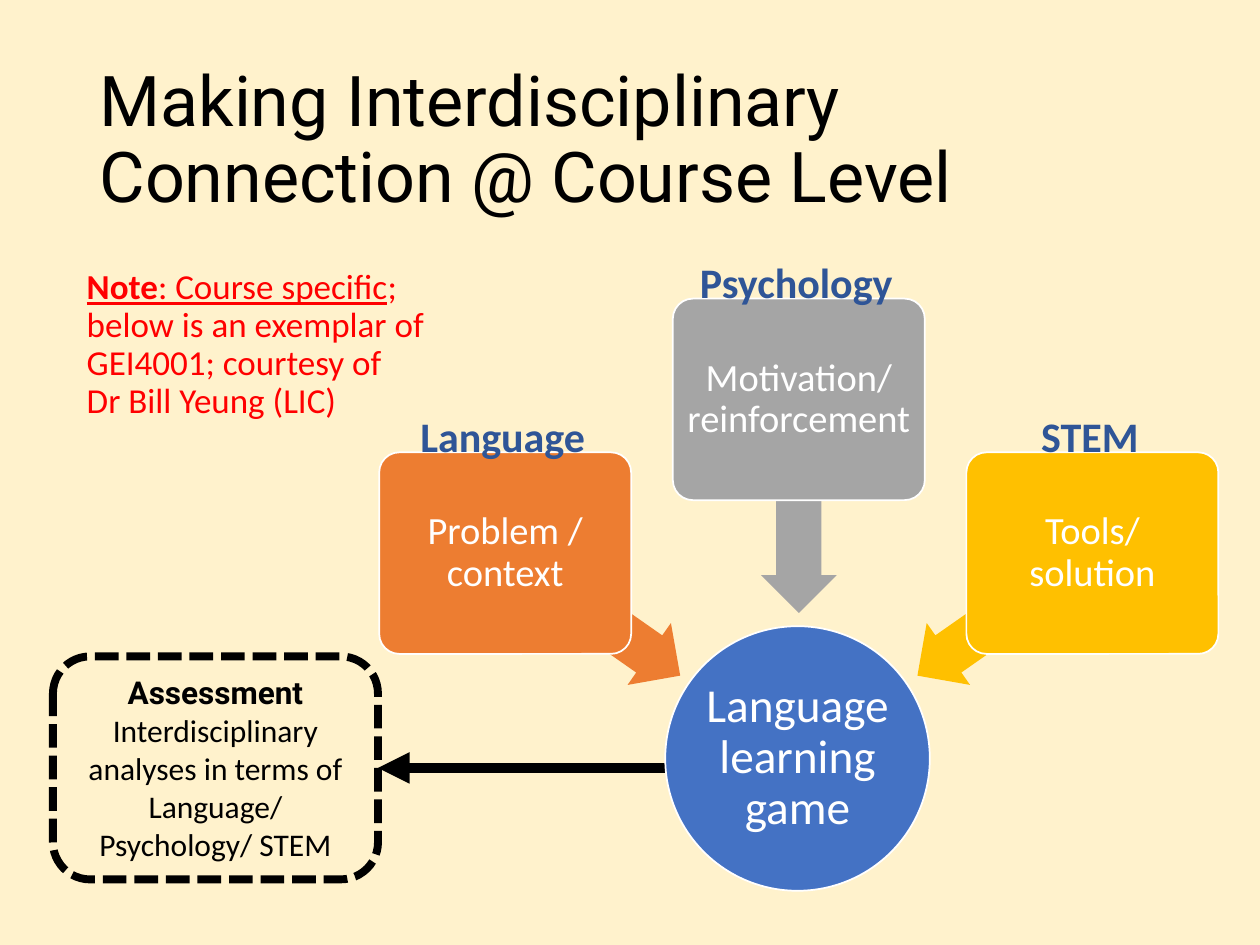
"""Build the slide on interdisciplinary connection at course level."""
import math

from lxml import etree
from pptx import Presentation
from pptx import util as u
from pptx.dml.color import RGBColor
from pptx.enum import dml, shapes, text
from pptx.oxml import ns

COLOURS = {
    "background": "FFF2CC", "ink": "000000", "paper": "FFFFFF", "note": "FF0000",
    "label": "2F5597", "hub": "4472C4", "language": "ED7D31",
    "psychology": "A5A5A5", "stem": "FFC000",
}
FRAME = {"word_wrap": True, "auto_size": text.MSO_AUTO_SIZE.NONE}
MIDDLE = {**FRAME, "vertical_anchor": text.MSO_ANCHOR.MIDDLE}
MARGINS = ("margin_left", "margin_top", "margin_right", "margin_bottom")
CENTRED = {"alignment": text.PP_ALIGN.CENTER}
TIGHT = {"line_spacing": 0.9}


def rgb(name):
    """Return the named colour."""
    return RGBColor.from_string(COLOURS[name])


def apply(target, values):
    """Set each attribute of the target from a dict."""
    for name, value in values.items():
        setattr(target, name, value)


def inches(box):
    """Turn a box of numbers into lengths."""
    return [u.Inches(length) for length in box]


def write(paragraph, wording, size, colour, face="Calibri", **style):
    """Add one formatted run to a paragraph."""
    run = paragraph.add_run()
    run.text = wording
    apply(run.font, {"size": u.Pt(size), "name": face, **style})
    run.font.color.rgb = rgb(colour)


def add_outline(slide, preset, box, fill=None, line=None, weight=1):
    """Add a preset shape with a plain fill and line."""
    outline = slide.shapes.add_shape(preset, *inches(box))
    outline.shadow.inherit = False
    if fill:
        outline.fill.solid()
        outline.fill.fore_color.rgb = rgb(fill)
    else:
        outline.fill.background()
    if line:
        outline.line.color.rgb = rgb(line)
        outline.line.width = u.Pt(weight)
    else:
        outline.line.fill.background()
    return outline


def add_title(slide, box):
    """Place and format the title."""
    title = slide.shapes.title
    apply(title, dict(zip(("left", "top", "width", "height"), inches(box))))
    apply(title.text_frame, MIDDLE)
    heading = title.text_frame.paragraphs[0]
    apply(heading, {**TIGHT, "alignment": text.PP_ALIGN.LEFT})
    write(heading, "Making Interdisciplinary Connection @ Course Level", 40, "ink", "Roboto")


def add_note(slide, box):
    """Add the red note about the course."""
    frame = slide.shapes.add_textbox(*inches(box)).text_frame
    apply(frame, FRAME)
    note = frame.paragraphs[0]
    apply(note, {**TIGHT, "space_before": u.Pt(10)})
    write(note, "Note", 20, "note", bold=True, underline=True)
    write(note, ": Course specific", 20, "note", underline=True)
    write(note, "; below is an exemplar of GEI4001; courtesy of ", 20, "note")
    note.add_line_break()
    write(note, "Dr Bill Yeung (LIC)", 20, "note")


def add_assessment(slide, box, start_x):
    """Add the dashed assessment box and the arrow that leads to it."""
    left, top, width, height = box
    assessment = add_outline(slide, shapes.MSO_SHAPE.ROUNDED_RECTANGLE, box, line="ink", weight=4.5)
    assessment.line.dash_style = dml.MSO_LINE.SQUARE_DOT
    frame = assessment.text_frame
    apply(frame, MIDDLE)
    heading, body = frame.paragraphs[0], frame.add_paragraph()
    for paragraph in (heading, body):
        apply(paragraph, CENTRED)
    write(heading, "Assessment", 18, "ink", "Roboto", bold=True)
    write(body, "Interdisciplinary analyses in terms of Language/ Psychology/ STEM", 18, "ink")

    middle = top + height / 2
    arrow = slide.shapes.add_connector(
        shapes.MSO_CONNECTOR.STRAIGHT, *inches((start_x, middle, left + width, middle)))
    arrow.end_connect(assessment, 3)
    arrow.line.color.rgb = rgb("ink")
    arrow.line.width = u.Pt(6)
    etree.SubElement(arrow.line._get_or_add_ln(), ns.qn("a:tailEnd"), type="triangle")
    etree.SubElement(arrow._element.spPr, ns.qn("a:effectLst"))


def add_node(slide, preset, box, fill, wording, size, margin, corner=None):
    """Add a filled shape with centred white wording."""
    node = add_outline(slide, preset, box, fill, "paper")
    if corner:
        node.adjustments[0] = corner
    apply(node.text_frame, {**MIDDLE, **dict.fromkeys(MARGINS, u.Inches(margin))})
    paragraph = node.text_frame.paragraphs[0]
    apply(paragraph, {**CENTRED, **TIGHT})
    write(paragraph, wording, size, "paper")


def add_discipline(slide, box, label, wording, fill, heading):
    """Add a discipline card with its label and its arrow to the hub."""
    left, top, width, height = box
    centre_x, centre_y = left + width / 2, top + height / 2
    length, breadth, reach = 1.69, 0.6, 0.85
    angle = math.radians(heading)
    arrow = add_outline(slide, shapes.MSO_SHAPE.LEFT_ARROW, (
        centre_x + reach * math.cos(angle) - length / 2,
        centre_y + reach * math.sin(angle) - breadth / 2, length, breadth), fill)
    arrow.rotation = heading + 180
    arrow.adjustments[0], arrow.adjustments[1] = 0.6, 0.5

    add_node(slide, shapes.MSO_SHAPE.ROUNDED_RECTANGLE, box, fill, wording, 22, 0.05, 0.1)
    caption = slide.shapes.add_textbox(*inches((left - 0.02, top - 0.38, width, 0.5))).text_frame
    apply(caption, {"word_wrap": False, "auto_size": text.MSO_AUTO_SIZE.SHAPE_TO_FIT_TEXT})
    apply(caption.paragraphs[0], CENTRED)
    write(caption.paragraphs[0], label, 24, "label", bold=True)


def main():
    """Build and save the slide."""
    deck = Presentation()
    deck.slide_width, deck.slide_height = u.Inches(10), u.Inches(7.5)
    slide = deck.slides.add_slide(deck.slide_layouts[5])
    slide.background.fill.solid()
    slide.background.fill.fore_color.rgb = rgb("background")

    add_title(slide, (0.69, 0.4, 8.62, 1.45))
    add_note(slide, (0.59, 2.09, 2.96, 1.52))
    add_assessment(slide, (0.42, 5.21, 2.58, 1.77), 6.07)
    add_node(slide, shapes.MSO_SHAPE.OVAL, (5.28, 4.97, 2.1, 2.1), "hub",
             "Language learning game", 27, 0)
    disciplines = (
        ("Language", "Problem / context", "language", 3.59, 35),
        ("Psychology", "Motivation/ reinforcement", "psychology", 2.37, 90),
        ("STEM", "Tools/ solution", "stem", 3.59, 145),
    )
    for column, (label, wording, fill, top, heading) in enumerate(disciplines):
        add_discipline(slide, (3.01 + column * 2.33, top, 2, 1.6), label, wording, fill, heading)
    deck.save("out.pptx")


if __name__ == "__main__":
    main()
